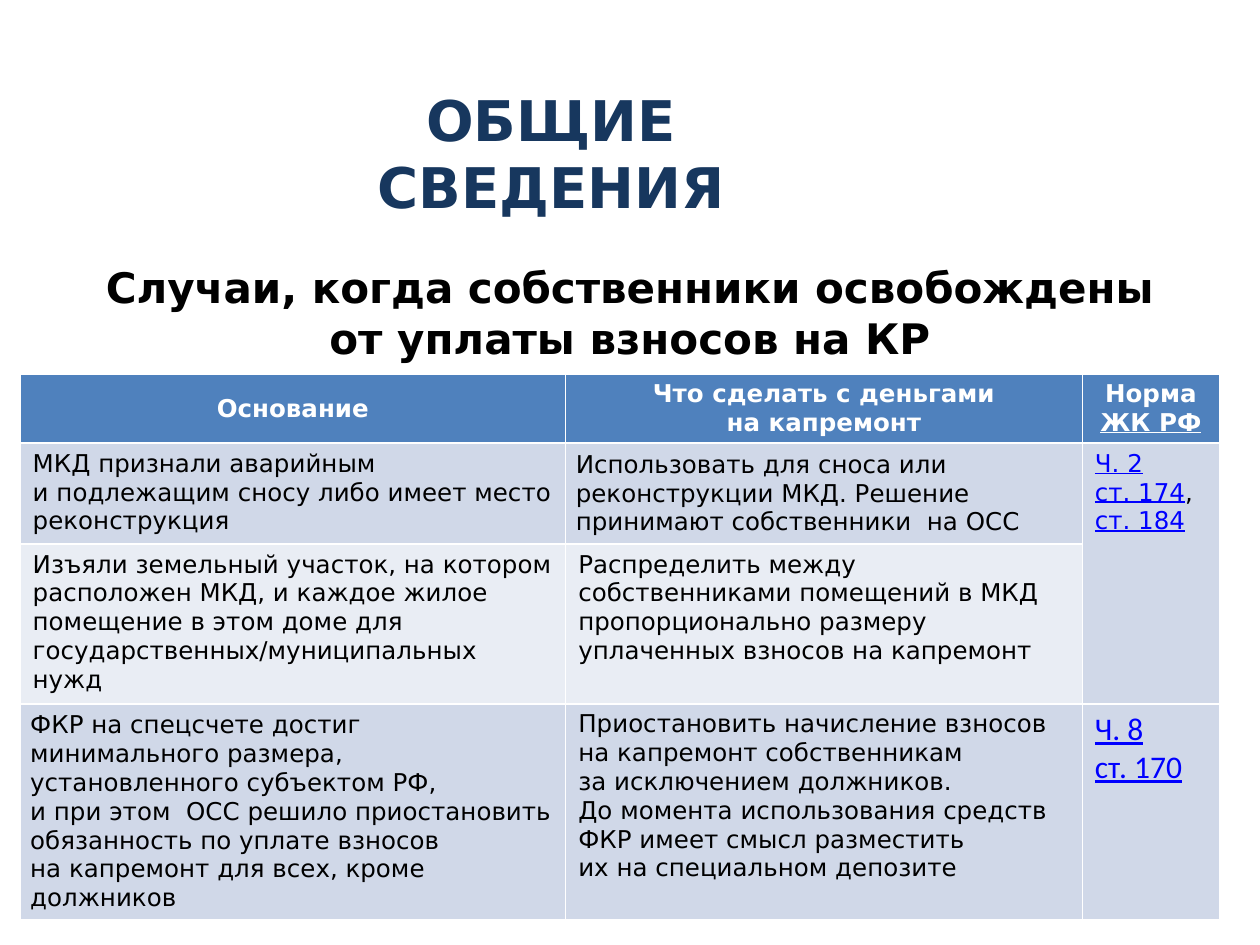
from dataclasses import dataclass
from typing import Any

from pptx import Presentation
from pptx.dml.color import RGBColor as Color
from pptx.enum.text import MSO_ANCHOR as Anchor, PP_ALIGN as Align
from pptx.util import Inches, Pt

NAVY = Color(0x17, 0x37, 0x5E)
BLACK = Color(0, 0, 0)
WHITE = Color(255, 255, 255)
LINK_BLUE = Color(0, 0, 255)
HEADER_BLUE = Color(0x4F, 0x81, 0xBD)
BAND_DARK = Color(0xD0, 0xD8, 0xE8)
BAND_LIGHT = Color(0xE9, 0xED, 0xF4)

MAIN_FONT = "DejaVu Sans"
NORM_FONT = "Calibri"
NO_BREAK_SPACE = chr(160)


def tie(text):
    """Turn each ~ into a no-break space."""
    return text.replace("~", NO_BREAK_SPACE)


@dataclass
class Deck:
    """Holds the slide and its style; lengths are percentages of the slide size."""
    slide: Any
    width: int
    height: int
    font: str = MAIN_FONT

    def across(self, share):
        return round(self.width * share / 100)

    def down(self, share):
        return round(self.height * share / 100)

    def box(self, left, top, width, height):
        return (self.across(left), self.down(top),
                self.across(width), self.down(height))

    def style(self, paragraph, size, color, bold=False, align=Align.LEFT, font=None):
        paragraph.alignment = align
        paragraph.font.name = font or self.font
        paragraph.font.size = Pt(size)
        paragraph.font.bold = bold
        paragraph.font.color.rgb = color

    def heading(self, area, lines, size, color, anchor=Anchor.TOP):
        frame = self.slide.shapes.add_textbox(*self.box(*area)).text_frame
        frame.word_wrap = True
        frame.vertical_anchor = anchor
        frame.text = tie("\n".join(lines))
        for paragraph in frame.paragraphs:
            self.style(paragraph, size, color, bold=True, align=Align.CENTER)

    def table(self, left, top, columns, rows):
        """Add a table whose white rules come from the default table style."""
        area = self.box(left, top, sum(columns), sum(rows))
        table = self.slide.shapes.add_table(len(rows), len(columns), *area).table
        for column, share in zip(table.columns, columns):
            column.width = self.across(share)
        for row, share in zip(table.rows, rows):
            row.height = self.down(share)
        return table

    def cell(self, cell, runs, fill, color=BLACK, size=14, bold=False,
             align=Align.LEFT, font=None, tight=False):
        """Fill a cell with (text, underlined, colour) runs; tight narrows its margins."""
        cell.fill.solid()
        cell.fill.fore_color.rgb = fill
        if tight:
            cell.vertical_anchor = Anchor.MIDDLE
            cell.margin_left = cell.margin_right = Inches(0.08)
            cell.margin_top = cell.margin_bottom = Inches(0.04)
        paragraph = cell.text_frame.paragraphs[0]
        self.style(paragraph, size, color, bold, align, font)
        for text, underlined, run_color in runs:
            run = paragraph.add_run()
            run.text = tie(text)
            if underlined:
                run.font.underline = True
            if run_color:
                run.font.color.rgb = run_color


def plain(text):
    return (text, False, None)


def link(text):
    return (text, True, LINK_BLUE)


HEADER = [
    [plain("Основание")],
    [plain("Что сделать с~деньгами на~капремонт")],
    [plain("Норма "), ("ЖК РФ", True, None)],
]
# Each row: fill, then (text, tight margins) for the ground and for the action
CASES = [
    (BAND_DARK,
     ("МКД признали аварийным и~подлежащим сносу либо имеет место реконструкция", False),
     ("Использовать для сноса или реконструкции МКД. Решение принимают "
      "собственники  на ОСС", True)),
    (BAND_LIGHT,
     ("Изъяли земельный участок, на котором расположен МКД, и каждое жилое "
      "помещение в этом доме для государственных/муниципальных нужд", False),
     ("Распределить между собственниками помещений в МКД пропорционально "
      "размеру уплаченных взносов на капремонт", False)),
    (BAND_DARK,
     ("ФКР на~спецсчете достиг минимального размера, установленного "
      "субъектом~РФ, и~при~этом  ОСС решило приостановить обязанность "
      "по~уплате взносов на~капремонт для~всех, кроме должников", True),
     ("Приостановить начисление взносов на~капремонт собственникам  "
      "за~исключением должников. До~момента использования средств ФКР имеет "
      "смысл разместить их~на~специальном депозите", False)),
]


def main():
    presentation = Presentation()
    presentation.slide_width = Inches(10)
    presentation.slide_height = Inches(7.5)
    slide = presentation.slides.add_slide(presentation.slide_layouts[6])
    deck = Deck(slide, presentation.slide_width, presentation.slide_height)

    deck.heading((23.45, 6.27, 40.6, 19.73), ["ОБЩИЕ СВЕДЕНИЯ"], 32, NAVY, Anchor.MIDDLE)
    deck.heading((2.35, 27.07, 95.3, 12),
                 ["Случаи, когда собственники освобождены",
                  "от~уплаты взносов на~КР"], 24, BLACK)

    table = deck.table(1.6, 39.6, [43.3, 41, 10.9], [7, 10.4, 16.5, 22.4])
    for column, runs in enumerate(HEADER):
        deck.cell(table.cell(0, column), runs, HEADER_BLUE, WHITE, bold=True,
                  align=Align.CENTER, tight=True)
    for row, (fill, *entries) in enumerate(CASES, start=1):
        for column, (text, tight) in enumerate(entries):
            deck.cell(table.cell(row, column), [plain(text)], fill, tight=tight)

    table.cell(1, 2).merge(table.cell(2, 2))
    deck.cell(table.cell(1, 2),
              [link("Ч.~2 ст.~174"), plain(", "), link("ст.~184")], BAND_DARK)
    deck.cell(table.cell(3, 2), [link("Ч.~8 ст.~170")], BAND_DARK,
              size=18, font=NORM_FONT)
    presentation.save("out.pptx")


if __name__ == "__main__":
    main()
